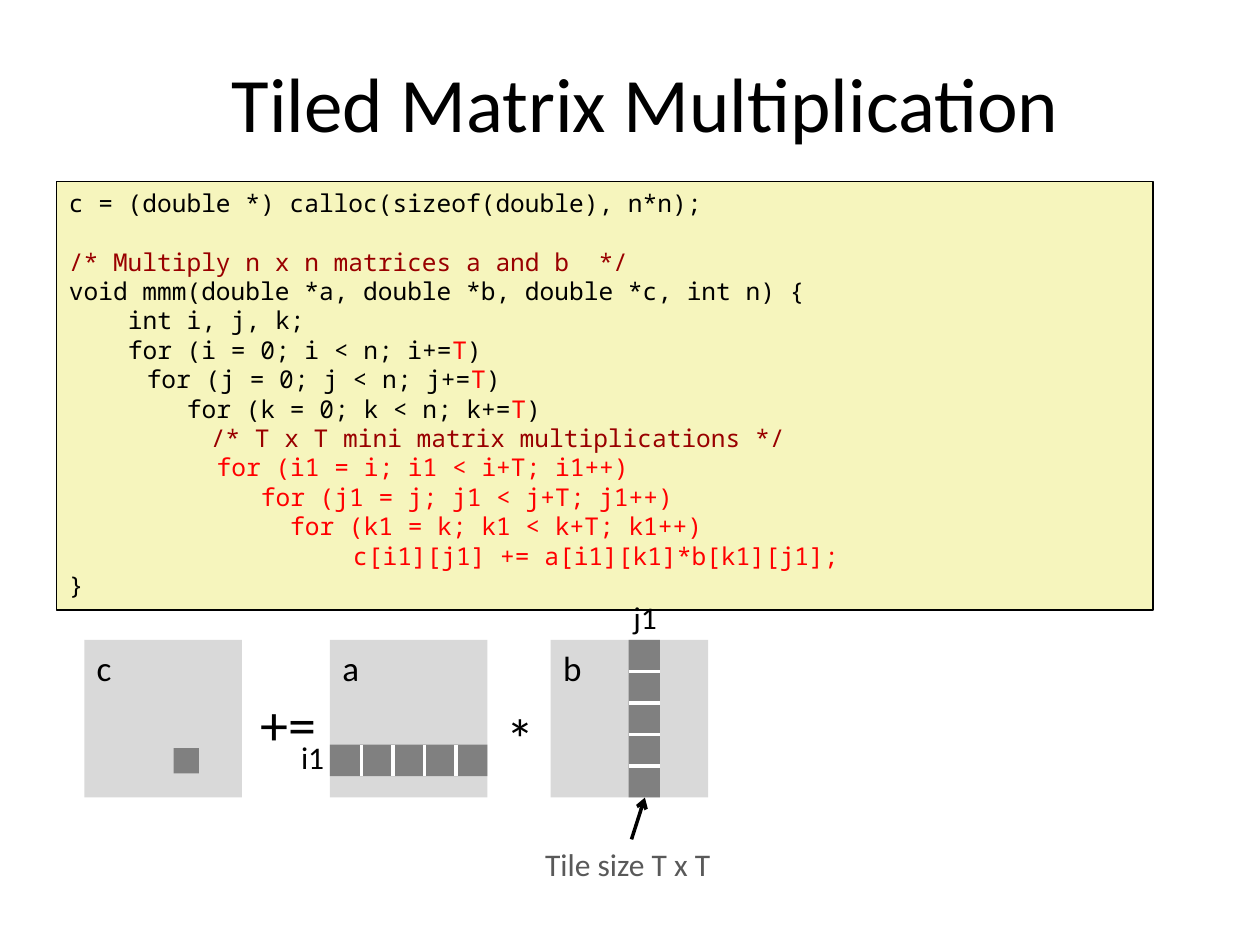
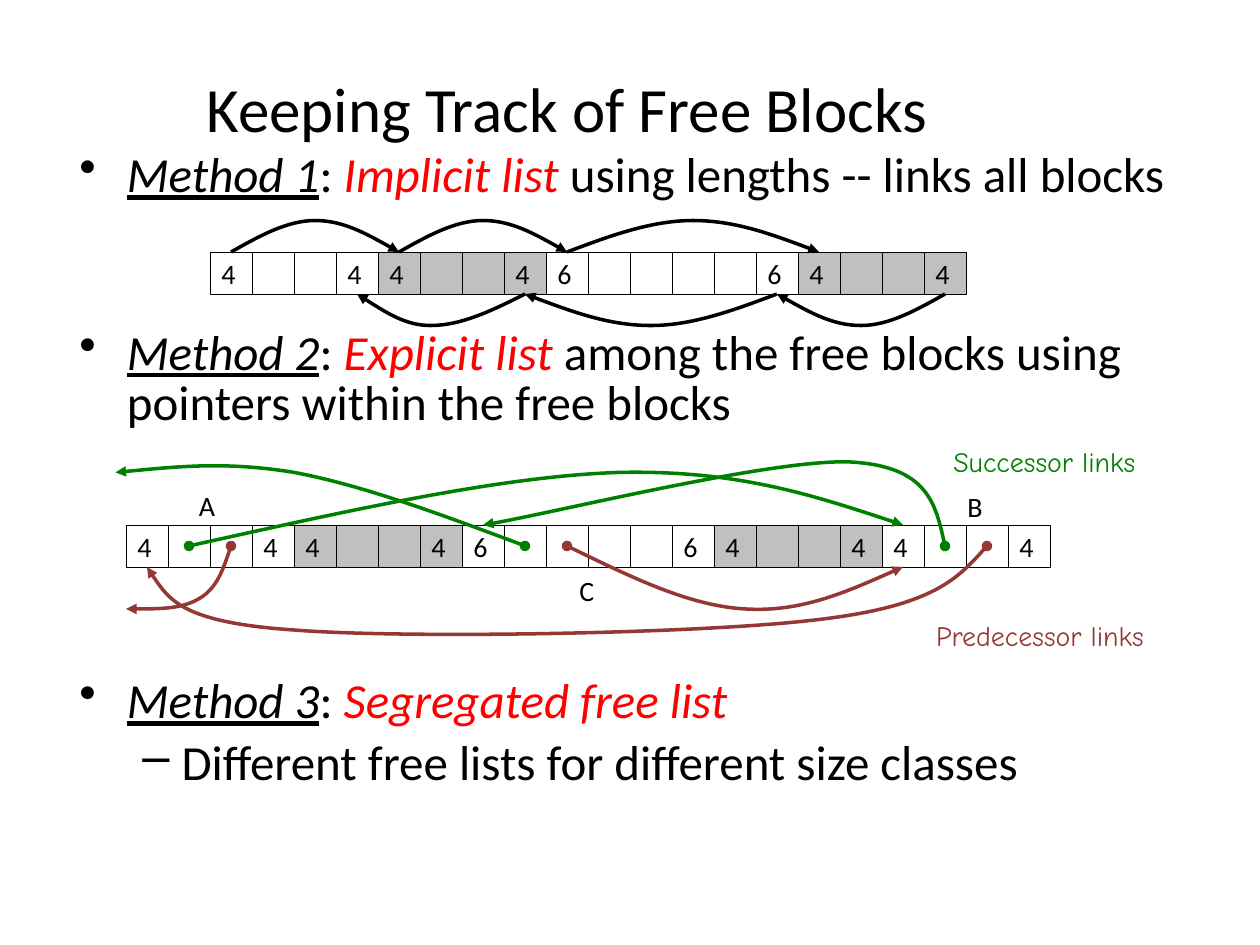
from dataclasses import dataclass
from itertools import pairwise
from typing import NamedTuple

from lxml.etree import SubElement
from pptx import Presentation
from pptx.dml.color import RGBColor
from pptx.enum.shapes import MSO_CONNECTOR, MSO_SHAPE
from pptx.enum.text import MSO_ANCHOR as Anchor, MSO_AUTO_SIZE as AutoSize, PP_ALIGN as Align
from pptx.oxml.ns import qn
from pptx.util import Cm, Pt

BLACK = RGBColor(0x00, 0x00, 0x00)
WHITE = RGBColor(0xFF, 0xFF, 0xFF)
RED = RGBColor(0xFF, 0x00, 0x00)
COMMENT = RGBColor(0x99, 0x00, 0x00)
CODE_FILL = RGBColor(0xF6, 0xF5, 0xBD)
MATRIX = RGBColor(0xD9, 0xD9, 0xD9)
TILE_FILL = RGBColor(0x80, 0x80, 0x80)
CAPTION = RGBColor(0x59, 0x59, 0x59)
USED = RGBColor(0xC0, 0xC0, 0xC0)
GREEN = RGBColor(0x00, 0x80, 0x00)
BROWN = RGBColor(0x95, 0x37, 0x35)

SANS, MONO, HAND = "Calibri", "Noto Sans Mono", "Comic Neue"
CELL = 2.54 / 3  # one memory word, in cm
SIDE = 3.175  # one matrix, in cm
TILES = 5
TILE = SIDE / TILES
CODE_PITCH = 16.8  # code line height, in points


class Box(NamedTuple):
    x: float
    y: float
    w: float
    h: float


class Span(NamedTuple):
    text: str
    color: RGBColor = BLACK
    italic: bool = False
    underline: bool = False


@dataclass
class Label:
    text: str
    box: Box
    size: float
    color: RGBColor = BLACK
    font: str = SANS


class CodeLine(NamedTuple):
    indent: float
    spans: list[Span]
    before: float = 0


class Item(NamedTuple):
    spans: list[Span]
    before: float
    bullet: str = "•"
    margin: float = 0.96
    hang: float = 0.96
    spacing: float = 0.85


class Block(NamedTuple):
    words: int
    free: bool


class Link(NamedTuple):
    color: RGBColor
    points: list[tuple[float, float]]  # in cells


# Shared drawing functions
def add_runs(p, spans: list[Span], size: float, font: str = SANS) -> None:
    for span in spans:
        r = p.add_run()
        r.text = span.text
        r.font.size, r.font.name = Pt(size), font
        r.font.color.rgb = span.color
        r.font.italic, r.font.underline = span.italic, span.underline


def add_box(s, box: Box):
    return s.shapes.add_textbox(*map(Cm, box))


def add_title(s, text: str, box: Box, size: float) -> None:
    tf = add_box(s, box).text_frame
    tf.word_wrap, tf.vertical_anchor = True, Anchor.MIDDLE
    tf.paragraphs[0].alignment = Align.CENTER
    add_runs(tf.paragraphs[0], [Span(text)], size)


def add_label(s, label: Label) -> None:
    tf = add_box(s, label.box).text_frame
    tf.word_wrap, tf.auto_size = False, AutoSize.SHAPE_TO_FIT_TEXT
    add_runs(tf.paragraphs[0], [Span(label.text, label.color)], label.size, label.font)


def add_rect(s, box: Box, fill: RGBColor, line_width: float = 0):
    sp = s.shapes.add_shape(MSO_SHAPE.RECTANGLE, *map(Cm, box))
    sp.shadow.inherit = False
    sp.fill.solid()
    sp.fill.fore_color.rgb = fill
    if line_width:
        sp.line.color.rgb, sp.line.width = BLACK, Pt(line_width)
    else:
        sp.line.fill.background()
    tf = sp.text_frame
    tf.word_wrap, tf.vertical_anchor = True, Anchor.TOP
    tf.paragraphs[0].alignment = Align.LEFT
    return sp


def style_line(sp, color: RGBColor, head: str = "", tail: str = "") -> None:
    sp.line.color.rgb, sp.line.width = color, Pt(2)
    ln = sp.line._get_or_add_ln()
    for tag, kind in (("a:headEnd", head), ("a:tailEnd", tail)):
        if kind:
            SubElement(ln, qn(tag), type=kind)


def add_line(s, x1: float, y1: float, x2: float, y2: float, color: RGBColor, tail: str = "") -> None:
    sp = s.shapes.add_connector(MSO_CONNECTOR.STRAIGHT, Cm(x1), Cm(y1), Cm(x2), Cm(y2))
    style_line(sp, color, tail=tail)
    SubElement(sp._element.spPr, qn("a:effectLst"))


def add_curve(s, link: Link, head: str = "") -> None:
    """Draw a chain of cubic curves; every third point lies on the curve."""
    start, *rest = [(Cm(x * CELL), Cm(y * CELL)) for x, y in link.points]
    builder = s.shapes.build_freeform(*start)
    builder.add_line_segments(rest, close=False)
    sp = builder.convert_to_shape()
    path = sp._element.find(".//" + qn("a:path"))
    steps = path.findall(qn("a:lnTo"))
    for i in range(0, len(steps), 3):
        curve = SubElement(path, qn("a:cubicBezTo"))
        for step in steps[i:i + 3]:
            curve.append(step[0])
            path.remove(step)
    sp.fill.background()
    sp.shadow.inherit = False
    style_line(sp, link.color, head, "triangle")


# Slide 1: tiled multiplication
def loop(head: str) -> list[Span]:
    return [Span(head), Span("T", RED), Span(")")]


CODE = [
    CodeLine(0, [Span("c = (double *) calloc(sizeof(double), n*n);")]),
    CodeLine(0, [Span("/* Multiply n x n matrices a and b  */", COMMENT)], CODE_PITCH),
    CodeLine(0, [Span("void mmm(double *a, double *b, double *c, int n) {")]),
    CodeLine(1.19, [Span("int i, j, k;")]),
    CodeLine(1.19, loop("for (i = 0; i < n; i+=")),
    CodeLine(1.57, loop("for (j = 0; j < n; j+=")),
    CodeLine(2.38, loop("for (k = 0; k < n; k+=")),
    CodeLine(2.86, [Span("/* T x T mini matrix multiplications */", COMMENT)]),
    CodeLine(2.98, [Span("for (i1 = i; i1 < i+T; i1++)", RED)]),
    CodeLine(3.87, [Span("for (j1 = j; j1 < j+T; j1++)", RED)]),
    CodeLine(4.46, [Span("for (k1 = k; k1 < k+T; k1++)", RED)]),
    CodeLine(5.73, [Span("c[i1][j1] += a[i1][k1]*b[k1][j1];", RED)]),
    CodeLine(0, [Span("}")]),
]
MATRIX_Y = 12.9
MATRIX_X = {"c": 1.7, "a": 6.65, "b": 11.1}
FORMULA_LABELS = [
    Label("i1", Box(5.82, 14.76, 0.99, 0.76), 18),
    Label("j1", Box(12.52, 11.94, 0.99, 0.76), 18),
    Label("*", Box(9.96, 14.05, 1.09, 1.14), 32),
    Label("+=", Box(5, 13.77, 1.65, 1.14), 32),
    Label("Tile size T x T", Box(10.74, 16.92, 3.94, 0.76), 18, CAPTION),
]


def build_tiling(prs) -> None:
    s = prs.slides.add_slide(prs.slide_layouts[6])
    add_title(s, "Tiled Matrix Multiplication", Box(0.91, 0.97, 24.21, 2.16), 44)

    # Code listing
    tf = add_rect(s, Box(1.14, 3.66, 22.1, 8.64), CODE_FILL, 1).text_frame
    for i, line in enumerate(CODE):
        p = tf.add_paragraph() if i else tf.paragraphs[0]
        p.alignment, p.space_before = Align.LEFT, Pt(line.before)
        p._p.get_or_add_pPr().set("marL", str(Cm(line.indent)))
        add_runs(p, line.spans, 14, MONO)

    # Matrices with the tiles in use
    for name, x in MATRIX_X.items():
        sp = add_rect(s, Box(x, MATRIX_Y, SIDE, SIDE), MATRIX)
        add_runs(sp.text_frame.paragraphs[0], [Span(name)], 20)
    row_x, row_y, col_x = MATRIX_X["a"], 15.01, 12.67
    add_rect(s, Box(3.5, 15.08, 0.51, 0.51), TILE_FILL)
    add_rect(s, Box(row_x, row_y, SIDE, TILE), TILE_FILL)
    add_rect(s, Box(col_x, MATRIX_Y, TILE, SIDE), TILE_FILL)
    for i in range(1, TILES):
        x, y = row_x + i * TILE, MATRIX_Y + i * TILE
        add_line(s, x, row_y, x, row_y + TILE, WHITE)
        add_line(s, col_x, y, col_x + TILE, y, WHITE)

    for label in FORMULA_LABELS:
        add_label(s, label)
    add_line(s, 12.73, 16.92, 13, 16.08, BLACK, "arrow")


# Slide 2: free block lists
def method(number: int, name: str, rest: str = "") -> list[Span]:
    spans = [Span(f"Method {number}", italic=True, underline=True), Span(": "), Span(name, RED, True)]
    return spans + ([Span(rest)] if rest else [])


METHODS = [
    Item(method(1, "Implicit list", " using lengths -- links all blocks"), 3),
    Item(method(2, "Explicit list", " among the free blocks using pointers within the free blocks"), 73),
    Item(method(3, "Segregated free list"), 142),
    Item([Span("Different free lists for different size classes")], 5.6, "–", 2.06, 0.79, 0.9),
]
HEAP = [Block(4, True), Block(4, False), Block(6, True), Block(4, False)]
FORWARD_STOPS = [5.5, 9.5, 13.5, 19.5]
BACKWARD_HOPS = [(12.5, 10.25, 8.5), (18.5, 15.5, 12.5), (22.5, 20.5, 18.5)]
LINKS = [
    Link(GREEN, [(4.5, 13), (8.22, 12.18), (11.91, 11.34), (14.75, 11.25),
                 (17.58, 11.19), (19.53, 11.85), (21.5, 12.5)]),
    Link(GREEN, [(22.5, 13), (22.29, 12.06), (22.08, 11.1), (20.25, 11),
                 (18.42, 10.92), (12.96, 12.27), (11.5, 12.5)]),
    Link(GREEN, [(12.5, 13), (10.56, 12.27), (8.61, 11.55), (7, 11.25),
                 (5.37, 10.98), (4.05, 11.13), (2.75, 11.25)]),
    Link(BROWN, [(23.5, 13), (22.86, 13.71), (22.23, 14.43), (19.5, 14.75), (16.75, 15.09),
                 (9.66, 15.21), (7, 15), (4.33, 14.82), (3.93, 14.16), (3.5, 13.5)]),
    Link(BROWN, [(13.5, 13), (14.97, 13.71), (16.41, 14.43), (17.75, 14.5),
                 (19.08, 14.58), (20.28, 14.04), (21.5, 13.5)]),
    Link(BROWN, [(5.5, 13), (5.33, 13.5), (5.17, 14), (4.75, 14.25),
                 (4.33, 14.5), (3.67, 14.5), (3, 14.5)]),
]
LIST_LABELS = [
    Label("Predecessor links", Box(18.62, 12.34, 5.16, 0.94), 16, BROWN, HAND),
    Label("Successor links", Box(18.97, 8.84, 4.6, 0.94), 16, GREEN, HAND),
    Label("A", Box(3.76, 9.73, 0.91, 0.94), 16),
    Label("B", Box(19.25, 9.75, 0.91, 0.94), 16),
    Label("C", Box(11.43, 11.43, 0.91, 0.94), 16),
]


def add_heap(s, col: float, row: float, blocks: list[Block]) -> None:
    """Draw words side by side; the first and last of a block show its size."""
    for block in blocks:
        for i in range(block.words):
            sp = add_rect(s, Box(col * CELL, row * CELL, CELL, CELL), WHITE if block.free else USED, 0.25)
            if i in (0, block.words - 1):
                tf = sp.text_frame
                tf.word_wrap, tf.vertical_anchor = False, Anchor.MIDDLE
                tf.margin_left = tf.margin_top = tf.margin_bottom = 0
                tf.margin_right = Cm(0.1)
                tf.paragraphs[0].alignment = Align.CENTER
                add_runs(tf.paragraphs[0], [Span(str(block.words))], 16)
            col += 1


def add_hop(s, start: float, peak: float, end: float, y: float, rise: float) -> None:
    up, down = (peak - start) / 3, (end - peak) / 3
    top = y + rise
    add_curve(s, Link(BLACK, [
        (start, y), (start + up, y + rise / 2), (start + 2 * up, top), (peak, top),
        (peak + down, top), (peak + 2 * down, y + rise / 2), (end, y)]))


def build_free_lists(prs) -> None:
    s = prs.slides.add_slide(prs.slide_layouts[6])
    add_title(s, "Keeping Track of Free Blocks", Box(1.27, 1.37, 20.32, 1.6), 36)

    # The three methods
    tf = add_box(s, Box(1.35, 2.95, 23.7, 13.97)).text_frame
    tf.word_wrap = True
    for i, item in enumerate(METHODS):
        p = tf.add_paragraph() if i else tf.paragraphs[0]
        p.space_before, p.line_spacing = Pt(item.before), item.spacing
        pPr = p._p.get_or_add_pPr()
        pPr.set("marL", str(Cm(item.margin)))
        pPr.set("indent", str(-Cm(item.hang)))
        SubElement(pPr, qn("a:buChar"), char=item.bullet)
        add_runs(p, item.spans, 28)

    # Implicit list
    add_heap(s, 5, 6, HEAP)
    for start, end in pairwise(FORWARD_STOPS):
        add_hop(s, start, (start + end) / 2, end, 6, -0.75)
    for start, peak, end in BACKWARD_HOPS:
        add_hop(s, start, peak, end, 7, 0.75)

    # Explicit list
    add_heap(s, 3, 12.5, HEAP + [Block(4, True)])
    for link in LINKS:
        add_curve(s, link, "oval")
    for label in LIST_LABELS:
        add_label(s, label)


def main() -> None:
    prs = Presentation()
    prs.slide_width, prs.slide_height = Cm(25.4), Cm(19.05)
    build_tiling(prs)
    build_free_lists(prs)
    prs.save("out.pptx")


if __name__ == "__main__":
    main()
